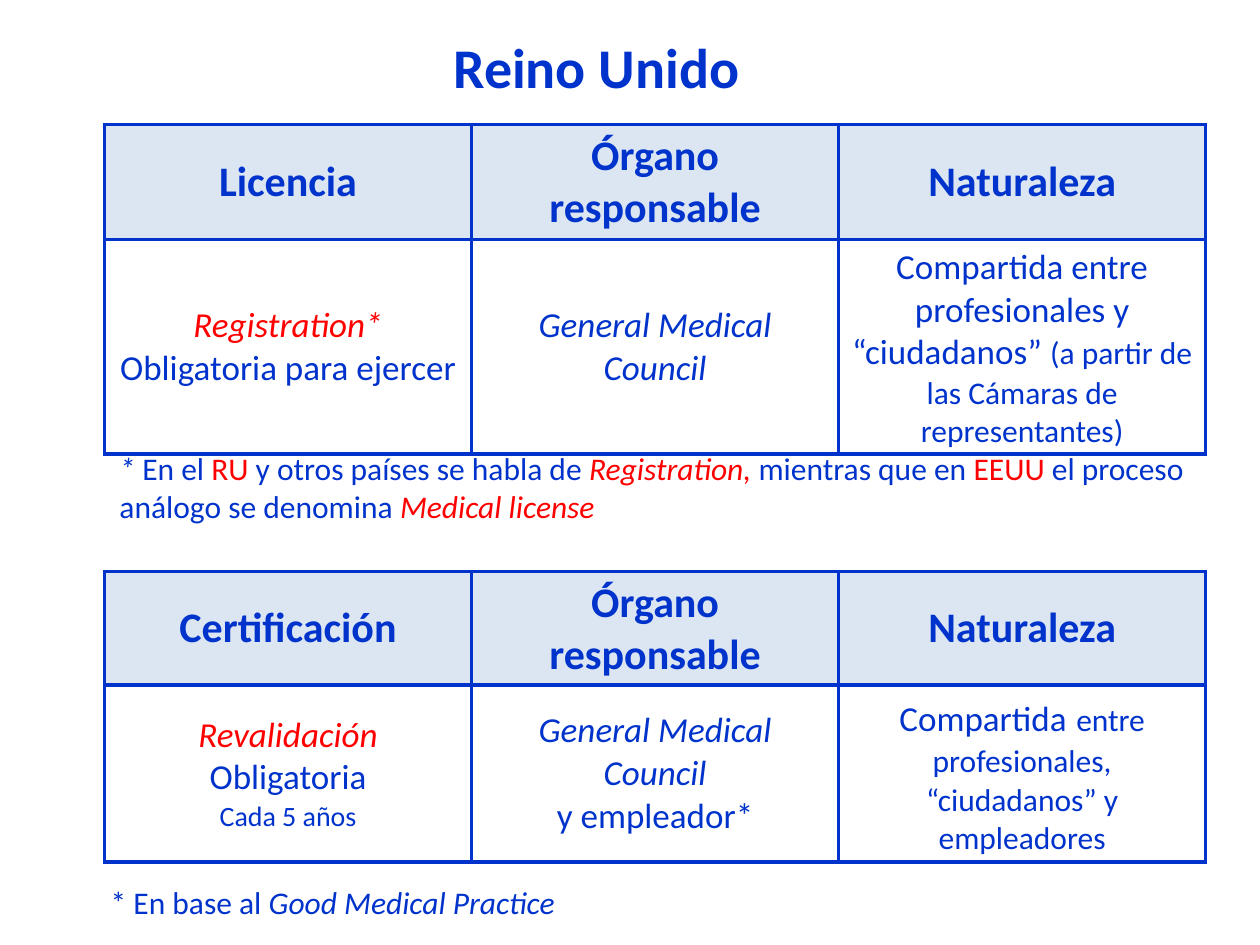
from lxml.etree import SubElement
from pptx import Presentation
from pptx.dml.color import RGBColor
from pptx.enum.text import MSO_ANCHOR, MSO_AUTO_SIZE, PP_ALIGN
from pptx.oxml.ns import qn
from pptx.util import Inches, Pt

WIDE, HIGH = Inches(10), Inches(7.5)
BLUE, RED, PALE = "0033CC", "FF0000", "DCE6F2"
HEAD, BODY, NOTE, TINY = 24, 20, 18, 16


def tint(code):
    """Turn a hex string into a colour."""
    return RGBColor.from_string(code)


def scale(box):
    """Turn percentages of the slide into lengths."""
    left, top, width, height = box
    return [int(part * full / 100) for part, full in
            ((left, WIDE), (top, HIGH), (width, WIDE), (height, HIGH))]


def write(frame, lines, align):
    """Fill a frame with lines of (text, size, marks): b bold, i italic, r red."""
    for row, line in enumerate(lines):
        para = frame.paragraphs[0] if row == 0 else frame.add_paragraph()
        para.alignment = align
        for text, size, marks in line:
            run = para.add_run()
            run.text = text
            font = run.font
            font.name, font.size = "Calibri", Pt(size)
            font.bold, font.italic = "b" in marks, "i" in marks
            font.color.rgb = tint(RED if "r" in marks else BLUE)


def add_text(slide, box, line, wrap=False):
    """Place one paragraph of runs in a box."""
    frame = slide.shapes.add_textbox(*scale(box)).text_frame
    frame.word_wrap = wrap
    frame.auto_size = MSO_AUTO_SIZE.SHAPE_TO_FIT_TEXT
    write(frame, [line], PP_ALIGN.LEFT)


def edge(cell):
    """Draw the four borders of a cell."""
    props = cell._tc.get_or_add_tcPr()
    for side in ("lnL", "lnR", "lnT", "lnB"):
        line = SubElement(props, qn(f"a:{side}"), w=str(Pt(2.25)))
        fill = SubElement(line, qn("a:solidFill"))
        SubElement(fill, qn("a:srgbClr"), val=BLUE)


def add_grid(slide, box, first, cells, share):
    """Place a table of a head row, with its share of the height, and a body row."""
    left, top, width, height = scale(box)
    table = slide.shapes.add_table(2, 3, left, top, width, height).table
    table.first_row = table.horz_banding = False
    for col in table.columns:
        col.width = width // 3
    table.rows[0].height = int(height * share)
    table.rows[1].height = height - table.rows[0].height
    heads = [[[(name, HEAD, "b")]] for name in (first, "Órgano responsable", "Naturaleza")]
    for row, group in enumerate((heads, cells)):
        for col, lines in enumerate(group):
            cell = table.cell(row, col)
            edge(cell)
            if row == 0:
                cell.fill.solid()
                cell.fill.fore_color.rgb = tint(PALE)
            else:
                cell.fill.background()
            cell.vertical_anchor = MSO_ANCHOR.MIDDLE
            write(cell.text_frame, lines, PP_ALIGN.CENTER)
    return table


def build(slide):
    """Lay out the title, the two tables and their notes."""
    left, width = 8.3, 87.4
    council = [("General Medical Council", BODY, "i")]
    add_text(slide, (35, 2.8, 25, 8.5), [("Reino Unido", 32, "b")])
    add_grid(slide, (left, 13.2, width, 34.7), "Licencia", [
        [[("Registration*", BODY, "ir")], [("Obligatoria para ejercer", BODY, "")]],
        [council],
        [[("Compartida entre profesionales y “ciudadanos” ", BODY, ""),
          ("(a partir de las Cámaras de representantes)", NOTE, "")]],
    ], 0.35)
    add_text(slide, (8.5, 46.9, width, 9.5), [
        ("* ", NOTE, "i"), ("En el ", NOTE, ""), ("RU", NOTE, "r"),
        (" y otros países se habla de ", NOTE, ""), ("Registration, ", NOTE, "ir"),
        ("mientras que en ", NOTE, ""), ("EEUU ", NOTE, "r"),
        ("el proceso análogo se denomina ", NOTE, ""), ("Medical license", NOTE, "ir"),
    ], True)
    lower = add_grid(slide, (left, 60.5, width, 30.7), "Certificación", [
        [[("Revalidación", BODY, "ir")], [("Obligatoria", BODY, "")],
         [("Cada 5 años", TINY, "")]],
        [council, [("y empleador*", BODY, "")]],
        [[("Compartida", BODY, ""), (" ", HEAD, ""),
          ("entre profesionales, “ciudadanos” y empleadores", NOTE, "")]],
    ], 0.39)
    lower.cell(1, 2).vertical_anchor = MSO_ANCHOR.TOP
    add_text(slide, (7.8, 92.8, 38.1, 5.3),
             [("* En base al ", NOTE, ""), ("Good Medical Practice", NOTE, "i")])


def main():
    """Make and save the deck."""
    deck = Presentation()
    deck.slide_width, deck.slide_height = WIDE, HIGH
    build(deck.slides.add_slide(deck.slide_layouts[6]))
    deck.save("out.pptx")


if __name__ == "__main__":
    main()
